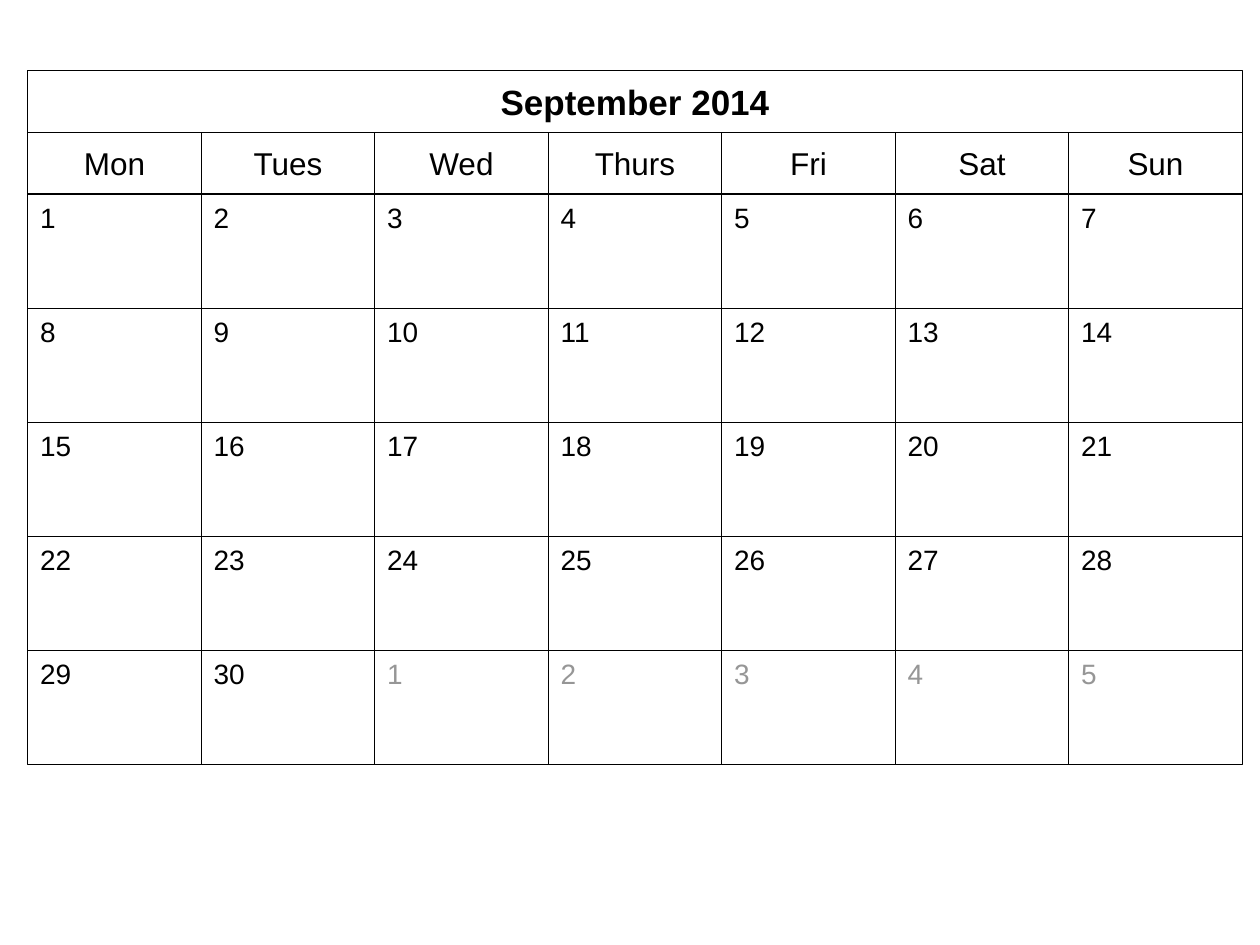
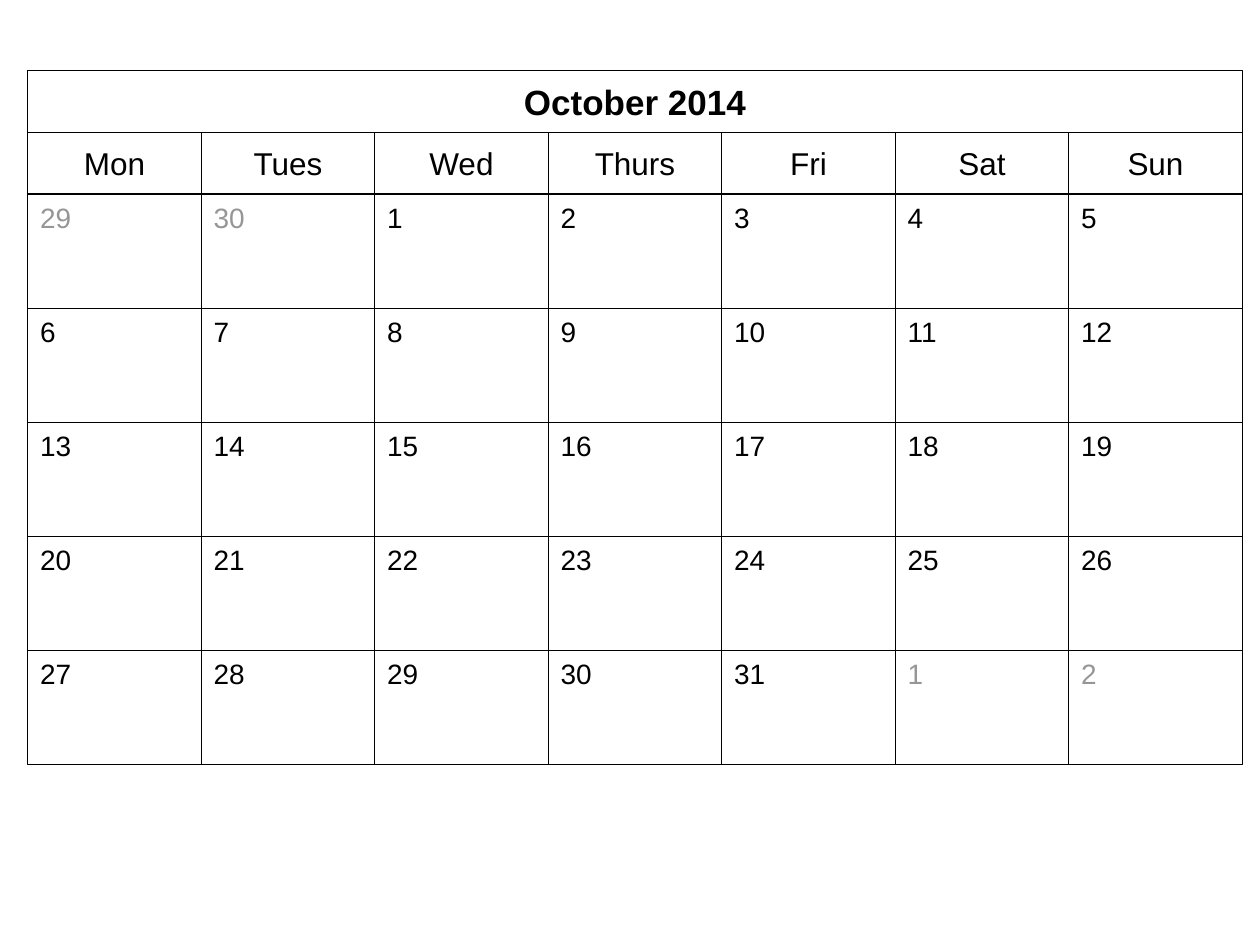
from pptx import Presentation
from pptx.dml.color import RGBColor
from pptx.enum.shapes import MSO_SHAPE
from pptx.enum.text import MSO_ANCHOR, PP_ALIGN
from pptx.util import Inches, Pt

RECT = MSO_SHAPE.RECTANGLE
TOP, MIDDLE = MSO_ANCHOR.TOP, MSO_ANCHOR.MIDDLE
LEFT, CENTER = PP_ALIGN.LEFT, PP_ALIGN.CENTER

COLORS = {"ink": "000000", "dim": "969696", "paper": "FFFFFF"}
FONT = "Arial"
DAYS = ["Mon", "Tues", "Wed", "Thurs", "Fri", "Sat", "Sun"]

# Month, column of day 1, days in the month, days in the month before
MONTHS = [("September 2014", 0, 30, 31), ("October 2014", 2, 31, 30)]

# Calendar grid, in inches
WEEKS = 5
X, Y, WIDTH = 0.22, 0.56, 9.64
COL = WIDTH / len(DAYS)
HEAD = 0.49
GRID = Y + 2 * HEAD
ROW = (6.07 - GRID) / WEEKS


def add_cell(slide, x, y, w, h, text, size, color="ink", head=False):
    box = slide.shapes.add_shape(RECT, Inches(x), Inches(y), Inches(w), Inches(h))
    box.shadow.inherit = False
    box.line.color.rgb = RGBColor.from_string(COLORS["ink"])
    box.line.width = Pt(0.75)
    frame = box.text_frame
    frame.word_wrap = True
    if head:
        box.fill.solid()
        box.fill.fore_color.rgb = RGBColor.from_string(COLORS["paper"])
        frame.margin_top = frame.margin_bottom = Inches(0.02)
    else:
        box.fill.background()
    frame.vertical_anchor = MIDDLE if head else TOP
    frame.text = text
    para = frame.paragraphs[0]
    para.alignment = CENTER if head else LEFT
    para.font.name = FONT
    para.font.size = Pt(size)
    para.font.color.rgb = RGBColor.from_string(COLORS[color])
    return para


prs = Presentation()
prs.slide_width, prs.slide_height = Inches(10), Inches(7.5)
blank = prs.slide_layouts[6]

for month, first, length, before in MONTHS:
    slide = prs.slides.add_slide(blank)

    # Month and weekday headings
    title = add_cell(slide, X, Y, WIDTH, HEAD, month, 20, head=True)
    title.font.bold = True
    for col, name in enumerate(DAYS):
        add_cell(slide, X + col * COL, Y + HEAD, COL, HEAD, name, 18, head=True)

    # Day cells, with the neighbouring months dimmed
    for spot in range(WEEKS * len(DAYS)):
        week, col = divmod(spot, len(DAYS))
        day, color = spot - first + 1, "ink"
        if day < 1:
            day, color = day + before, "dim"
        elif day > length:
            day, color = day - length, "dim"
        add_cell(slide, X + col * COL, GRID + week * ROW, COL, ROW,
                 str(day), 16, color)

prs.save("out.pptx")
